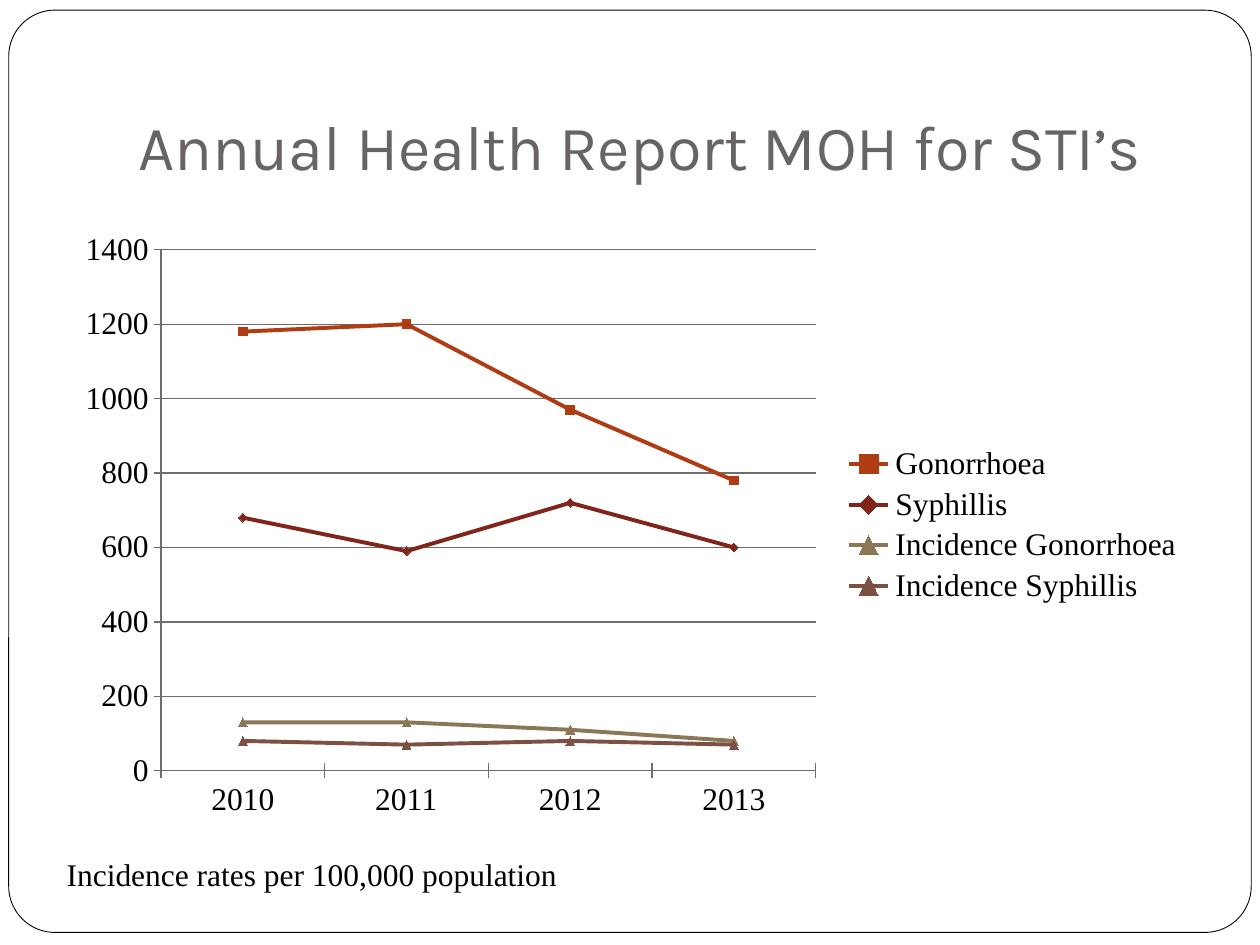
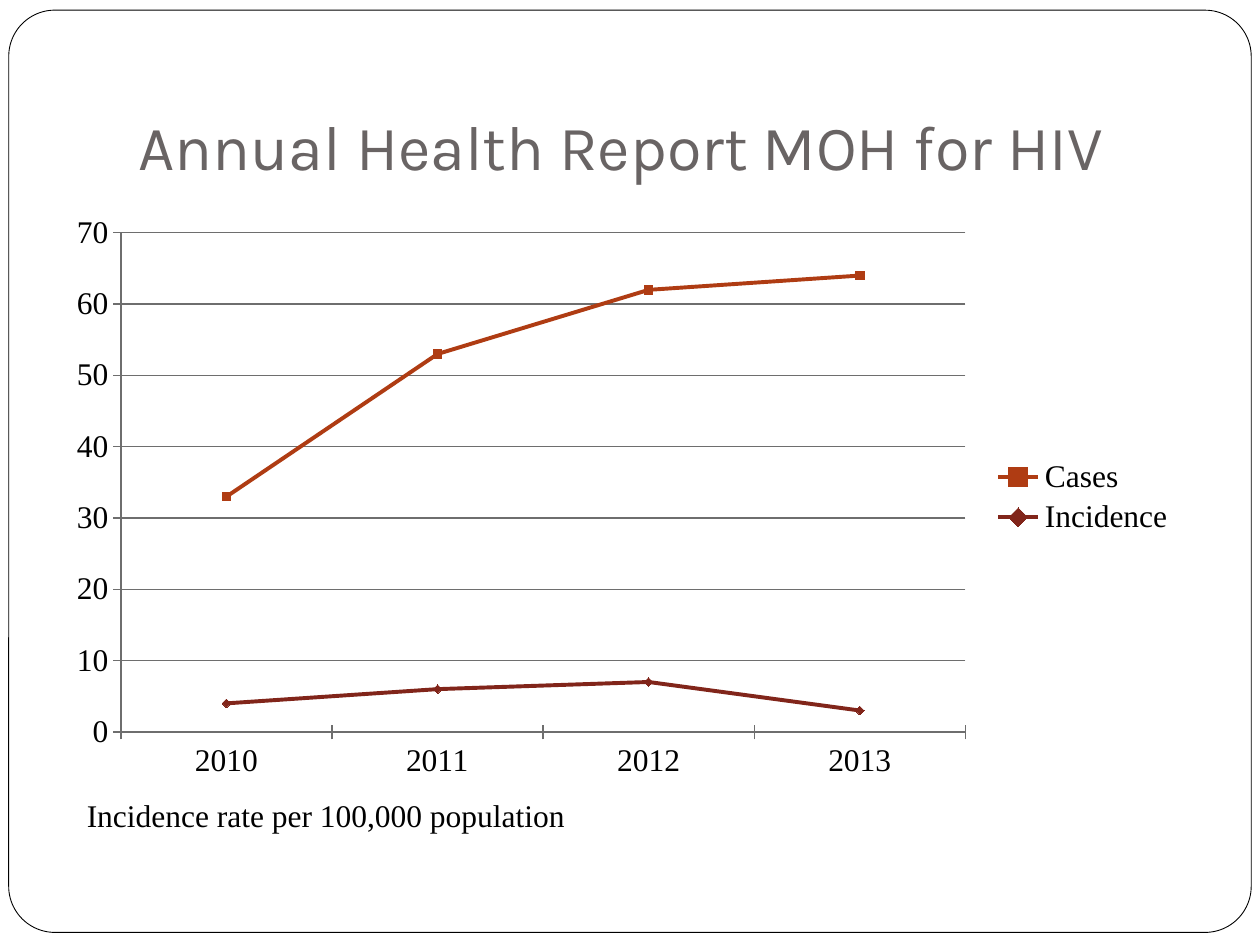
from dataclasses import dataclass

from pptx import Presentation
from pptx.chart.chart import Chart
from pptx.chart.data import CategoryChartData
from pptx.dml.color import RGBColor
from pptx.enum.chart import XL_CHART_TYPE, XL_LEGEND_POSITION, XL_MARKER_STYLE, XL_TICK_MARK
from pptx.enum.shapes import MSO_SHAPE
from pptx.enum.text import MSO_ANCHOR, MSO_AUTO_SIZE, PP_ALIGN
from pptx.slide import Slide
from pptx.util import Pt

LINE_MARKERS = XL_CHART_TYPE.LINE_MARKERS
LEGEND_RIGHT = XL_LEGEND_POSITION.RIGHT
MARKERS = (XL_MARKER_STYLE.SQUARE, XL_MARKER_STYLE.DIAMOND,
           XL_MARKER_STYLE.TRIANGLE, XL_MARKER_STYLE.TRIANGLE)
TICK_CROSS = XL_TICK_MARK.CROSS
TICK_NONE = XL_TICK_MARK.NONE
ROUNDED = MSO_SHAPE.ROUNDED_RECTANGLE
BOTTOM = MSO_ANCHOR.BOTTOM
LEFT = PP_ALIGN.LEFT
FIT_SHAPE = MSO_AUTO_SIZE.SHAPE_TO_FIT_TEXT
FIXED = MSO_AUTO_SIZE.NONE

TITLE_FONT, BODY_FONT = "Karla", "Times New Roman"
WHITE, BLACK, GREY, AXIS_GREY = "FFFFFF", "000000", "696464", "6E6E6E"
SERIES_COLOURS = ("D34817", "9B2D1F", "A28E6A", "956251")
SERIES_SHADE = -0.17
YEARS = ("2010", "2011", "2012", "2013")


@dataclass(frozen=True)
class Box:
    left: float
    top: float
    width: float
    height: float

    def lengths(self) -> tuple[Pt, Pt, Pt, Pt]:
        return Pt(self.left), Pt(self.top), Pt(self.width), Pt(self.height)


@dataclass(frozen=True)
class Report:
    title: str
    series: dict[str, tuple[int, ...]]
    chart_box: Box
    note: str
    note_box: Box


FRAME_BOX = Box(5, 5.8, 710, 527)
TITLE_BOX = Box(72, 21.6, 612, 90)

REPORTS = (
    Report(
        "Annual Health Report MOH for STI’s",
        {
            "Gonorrhoea": (1180, 1200, 970, 780),
            "Syphillis": (680, 590, 720, 600),
            "Incidence Gonorrhoea": (130, 130, 110, 80),
            "Incidence Syphillis": (80, 70, 80, 70),
        },
        Box(36, 126, 648, 348),
        "Incidence rates per 100,000 population",
        Box(31, 485.3, 657, 29),
    ),
    Report(
        "Annual Health Report MOH for HIV",
        {"Cases": (33, 53, 62, 64), "Incidence": (4, 6, 7, 3)},
        Box(31, 116.6, 648, 335),
        "Incidence rate per 100,000 population",
        Box(42.5, 451.4, 641, 29),
    ),
)


def colour(value: str) -> RGBColor:
    return RGBColor.from_string(value)


def style_font(font, name: str, size: float, value: str) -> None:
    font.name = name
    font.size = Pt(size)
    font.color.rgb = colour(value)


def add_title(slide: Slide, text: str) -> None:
    title = slide.shapes.title
    title.left, title.top, title.width, title.height = TITLE_BOX.lengths()
    text_frame = title.text_frame
    text_frame.text = text
    text_frame.vertical_anchor = BOTTOM
    text_frame.auto_size = FIXED
    text_frame.margin_bottom = Pt(7.2)
    paragraph = text_frame.paragraphs[0]
    paragraph.alignment = LEFT
    style_font(paragraph.runs[0].font, TITLE_FONT, 36, GREY)


def add_frame(slide: Slide) -> None:
    frame = slide.shapes.add_shape(ROUNDED, *FRAME_BOX.lengths())
    frame.adjustments[0] = 0.05
    frame.shadow.inherit = False
    frame.fill.solid()
    frame.fill.fore_color.rgb = colour(WHITE)
    frame.line.color.rgb = colour(BLACK)
    frame.line.width = Pt(0.5)
    slide.shapes.title.element.addprevious(frame.element)


def style_axes(chart: Chart) -> None:
    chart.value_axis.has_major_gridlines = True
    for axis in (chart.category_axis, chart.value_axis):
        axis.major_tick_mark = TICK_CROSS
        axis.minor_tick_mark = TICK_NONE
        axis.format.line.color.rgb = colour(AXIS_GREY)
        axis.format.line.width = Pt(0.75)
    gridline = chart.value_axis.major_gridlines.format.line
    gridline.color.rgb = colour(AXIS_GREY)
    gridline.width = Pt(0.75)


def style_series(chart: Chart) -> None:
    for series, value, marker in zip(chart.plots[0].series, SERIES_COLOURS, MARKERS):
        series.smooth = False
        series.format.line.width = Pt(2.25)
        series.marker.style = marker
        series.marker.size = 5
        series.marker.format.fill.solid()
        for target in (series.format.line.color,
                       series.marker.format.fill.fore_color,
                       series.marker.format.line.color):
            target.rgb = colour(value)
            target.brightness = SERIES_SHADE


def add_line_chart(slide: Slide, report: Report) -> None:
    data = CategoryChartData()
    data.categories = YEARS
    for name, values in report.series.items():
        data.add_series(name, values)
    chart = slide.shapes.add_chart(LINE_MARKERS, *report.chart_box.lengths(), data).chart
    style_font(chart.font, BODY_FONT, 18, BLACK)
    chart.has_title = False
    chart.has_legend = True
    chart.legend.position = LEGEND_RIGHT
    chart.legend.include_in_layout = False
    chart.plots[0].vary_by_categories = False
    style_axes(chart)
    style_series(chart)


def add_note(slide: Slide, report: Report) -> None:
    text_frame = slide.shapes.add_textbox(*report.note_box.lengths()).text_frame
    text_frame.word_wrap = True
    text_frame.auto_size = FIT_SHAPE
    text_frame.text = report.note
    style_font(text_frame.paragraphs[0].runs[0].font, BODY_FONT, 18, BLACK)


def main() -> None:
    presentation = Presentation()
    presentation.slide_width, presentation.slide_height = Pt(720), Pt(540)
    title_only = presentation.slide_layouts.get_by_name("Title Only")
    for report in REPORTS:
        slide = presentation.slides.add_slide(title_only)
        add_frame(slide)
        add_title(slide, report.title)
        add_line_chart(slide, report)
        add_note(slide, report)
    presentation.save("out.pptx")


if __name__ == "__main__":
    main()
